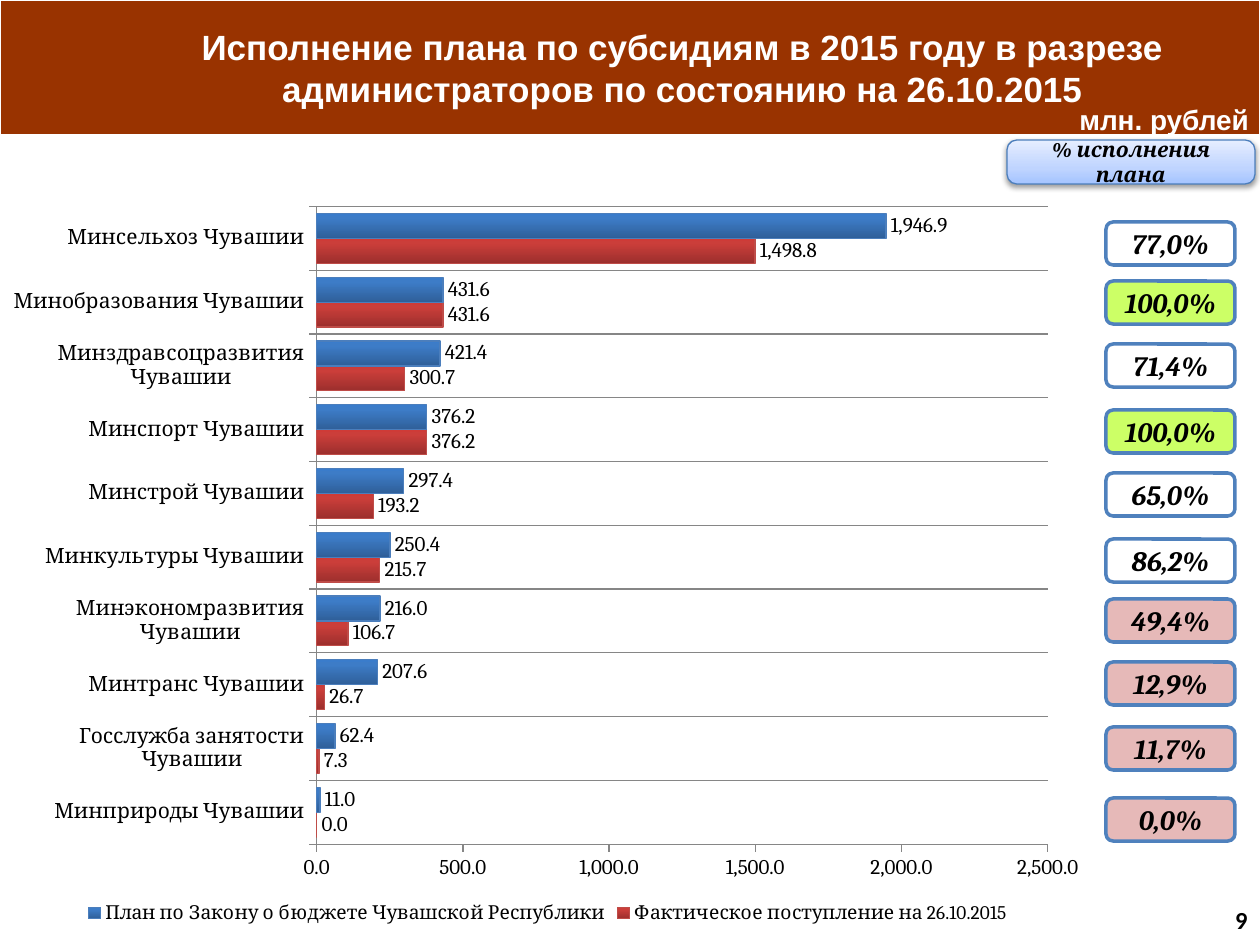
from copy import deepcopy

from pptx import Presentation
from pptx.chart.data import CategoryChartData
from pptx.dml.color import RGBColor
from pptx.enum.chart import XL_CHART_TYPE, XL_LABEL_POSITION, XL_LEGEND_POSITION, XL_TICK_MARK
from pptx.enum.shapes import MSO_SHAPE
from pptx.enum.text import MSO_ANCHOR, PP_ALIGN
from pptx.oxml import parse_xml
from pptx.oxml.ns import nsdecls
from pptx.util import Emu, Pt

TITLE = "Исполнение плана по субсидиям в 2015 году в разрезе администраторов по состоянию на 26.10.2015"
UNITS = "млн. рублей"
PERCENT_HEADING = "% исполнения плана"
PAGE_NUMBER = "9"
FACT_NAME = "Фактическое поступление на 26.10.2015"
PLAN_NAME = "План по Закону о бюджете Чувашской Республики"

# administrator, actual, plan, percent, badge fill, badge top in px
WHITE, GREEN, PINK = "FFFFFF", "CCFF66", "E6B9B8"
ADMINISTRATORS = [
    ("Минсельхоз Чувашии", 1498.8, 1946.9, "77,0%", WHITE, 222),
    ("Минобразования Чувашии", 431.6, 431.6, "100,0%", GREEN, 281),
    ("Минздравсоцразвития Чувашии", 300.7, 421.4, "71,4%", WHITE, 344),
    ("Минспорт Чувашии", 376.2, 376.2, "100,0%", GREEN, 410),
    ("Минстрой Чувашии", 193.2, 297.4, "65,0%", WHITE, 473),
    ("Минкультуры Чувашии", 215.7, 250.4, "86,2%", WHITE, 539),
    ("Минэкономразвития Чувашии", 106.7, 216.0, "49,4%", PINK, 599),
    ("Минтранс Чувашии", 26.7, 207.6, "12,9%", PINK, 662),
    ("Госслужба занятости Чувашии", 7.3, 62.4, "11,7%", PINK, 727),
    ("Минприроды Чувашии", 0, 11.0, "0,0%", PINK, 798),
]

# gradient stops run from bottom to top
SERIES_COLOURS = [
    ([(0, "9C2F2D"), (0.8, "CB3E3A"), (1, "CE3B37")], "BF4C48"),
    ([(0, "2F5F99"), (0.8, "3D7CC7"), (1, "3A7CCB")], "4B7EBC"),
]
HEADING_STOPS = [(0, "A4C4FF"), (0.35, "BFD4FF"), (1, "E6EEFF")]
PLOT_BOX = {"x": 0.289, "y": 0.029, "w": 0.667, "h": 0.856}
NUMBER_FORMAT = "#,##0.0"

TITLE_FONT = {"name": "Arial", "size": Pt(20), "bold": True}
UNITS_FONT = {**TITLE_FONT, "size": Pt(16)}
BADGE_FONT = {"name": "Cambria", "size": Pt(16), "bold": True, "italic": True}
HEADING_FONT = {**BADGE_FONT, "size": Pt(12)}
PAGE_FONT = {"name": "Calibri", "size": Pt(14), "bold": True}
CHART_FONT = {"name": "Cambria", "size": Pt(12), "bold": False}


def px(count):
    return Emu(round(count * 914400 / 126))


def rgb(colour):
    return RGBColor.from_string(colour)


def set_all(target, values):
    for name, value in values.items():
        setattr(target, name, value)


def set_font(font, values, colour="000000"):
    set_all(font, values)
    font.color.rgb = rgb(colour)


def place(shape, box):
    set_all(shape, dict(zip(("left", "top", "width", "height"), map(px, box))))


def set_line(line, colour, width):
    line.color.rgb = rgb(colour)
    line.width = Pt(width)


def set_gradient(fill, owner, stops):
    """Fill with three upward stops; owner is the element holding the fill."""
    fill.gradient()
    fill.gradient_angle = 90
    stop_list = owner.xpath(".//a:gsLst")[0]
    stop_list.append(deepcopy(stop_list[-1]))
    for stop, (position, colour) in zip(fill.gradient_stops, stops):
        stop.position = position
        stop.color.rgb = rgb(colour)


def write(shape, text, font, colour="000000", align=PP_ALIGN.CENTER,
          anchor=MSO_ANCHOR.MIDDLE, wrap=True):
    set_all(shape.text_frame, {"text": text, "word_wrap": wrap, "vertical_anchor": anchor})
    paragraph = shape.text_frame.paragraphs[0]
    paragraph.alignment = align
    set_font(paragraph.runs[0].font, font, colour)


def add_box(slide, kind, box, line_colour, line_width):
    shape = slide.shapes.add_shape(kind, *map(px, box))
    shape.shadow.inherit = False
    set_line(shape.line, line_colour, line_width)
    return shape


def add_text(slide, box, text, font, **options):
    write(slide.shapes.add_textbox(*map(px, box)), text, font, **options)


def add_title(slide):
    band = add_box(slide, MSO_SHAPE.RECTANGLE, (0, 0, 1260, 135), WHITE, 0.75)
    band.fill.solid()
    band.fill.fore_color.rgb = rgb("993300")
    title = slide.shapes.title
    band._element.addnext(title._element)
    place(title, (105, 0, 1155, 135))
    write(title, TITLE, TITLE_FONT, WHITE)


def add_budget_chart(slide):
    names, actual, plan = list(zip(*reversed(ADMINISTRATORS)))[:3]
    data = CategoryChartData(number_format=NUMBER_FORMAT)
    data.categories = names
    data.add_series(FACT_NAME, actual)
    data.add_series(PLAN_NAME, plan)
    chart = slide.shapes.add_chart(
        XL_CHART_TYPE.BAR_CLUSTERED, *map(px, (0, 185, 1096, 745)), data).chart
    set_font(chart.font, CHART_FONT)
    set_all(chart, {"has_title": False, "has_legend": True})
    set_all(chart.legend, {"position": XL_LEGEND_POSITION.BOTTOM, "include_in_layout": False})
    set_font(chart.legend.font, {**CHART_FONT, "size": Pt(11)})

    values, categories = chart.value_axis, chart.category_axis
    set_all(values, {"minimum_scale": 0, "maximum_scale": 2500, "major_unit": 500,
                     "has_major_gridlines": False})
    set_all(values.tick_labels, {"number_format": NUMBER_FORMAT, "number_format_is_linked": False})
    categories.has_major_gridlines = True
    for axis in (values, categories):
        axis.major_tick_mark = XL_TICK_MARK.OUTSIDE
        set_line(axis.format.line, "868686", 0.75)
    set_line(categories.major_gridlines.format.line, "868686", 0.75)

    plot = chart.plots[0]
    set_all(plot, {"gap_width": 56, "overlap": 0, "vary_by_categories": False})
    for series, (stops, outline) in zip(plot.series, SERIES_COLOURS):
        series.invert_if_negative = False
        set_gradient(series.format.fill, series._element, stops)
        set_line(series.format.line, outline, 0.75)
        labels = series.data_labels
        set_all(labels, {"show_value": True, "number_format": NUMBER_FORMAT,
                         "number_format_is_linked": False,
                         "position": XL_LABEL_POSITION.OUTSIDE_END})
        set_font(labels.font, CHART_FONT)

    plot_area = chart._chartSpace.xpath(".//c:plotArea")[0]
    for layout in plot_area.xpath("./c:layout"):
        plot_area.remove(layout)
    edges = "".join(f'<c:{side}Mode val="edge"/>' for side in "xy")
    sizes = "".join(f'<c:{side} val="{share}"/>' for side, share in PLOT_BOX.items())
    plot_area.insert(0, parse_xml(
        f'<c:layout {nsdecls("c")}><c:manualLayout><c:layoutTarget val="inner"/>'
        f"{edges}{sizes}</c:manualLayout></c:layout>"))


def add_percentages(slide):
    heading = add_box(slide, MSO_SHAPE.ROUNDED_RECTANGLE, (1007, 140, 248, 44), "4B7EBC", 0.75)
    heading.adjustments[0] = 0.22
    properties = heading._element.spPr
    set_gradient(heading.fill, properties, HEADING_STOPS)
    properties.xpath("./a:effectLst")[0].append(parse_xml(
        f'<a:outerShdw {nsdecls("a")} blurRad="{Pt(3.1)}" dist="{Pt(1.6)}" dir="5400000" '
        'rotWithShape="0"><a:srgbClr val="000000"><a:alpha val="38000"/></a:srgbClr></a:outerShdw>'))
    write(heading, PERCENT_HEADING, HEADING_FONT)

    for *_, percent, colour, top in ADMINISTRATORS:
        badge = add_box(slide, MSO_SHAPE.ROUNDED_RECTANGLE, (1106, top, 129, 43), "4F81BD", 2)
        badge.fill.solid()
        badge.fill.fore_color.rgb = rgb(colour)
        write(badge, percent, BADGE_FONT)


def main():
    presentation = Presentation()
    set_all(presentation, {"slide_width": px(1260), "slide_height": px(945)})
    slide = presentation.slides.add_slide(presentation.slide_layouts[5])
    add_title(slide)
    add_text(slide, (1067, 96, 197, 47), UNITS, UNITS_FONT, colour=WHITE,
             align=PP_ALIGN.LEFT, anchor=MSO_ANCHOR.TOP, wrap=False)
    add_budget_chart(slide)
    add_percentages(slide)
    add_text(slide, (1115, 895, 145, 50), PAGE_NUMBER, PAGE_FONT, align=PP_ALIGN.RIGHT)
    presentation.save("out.pptx")


if __name__ == "__main__":
    main()
